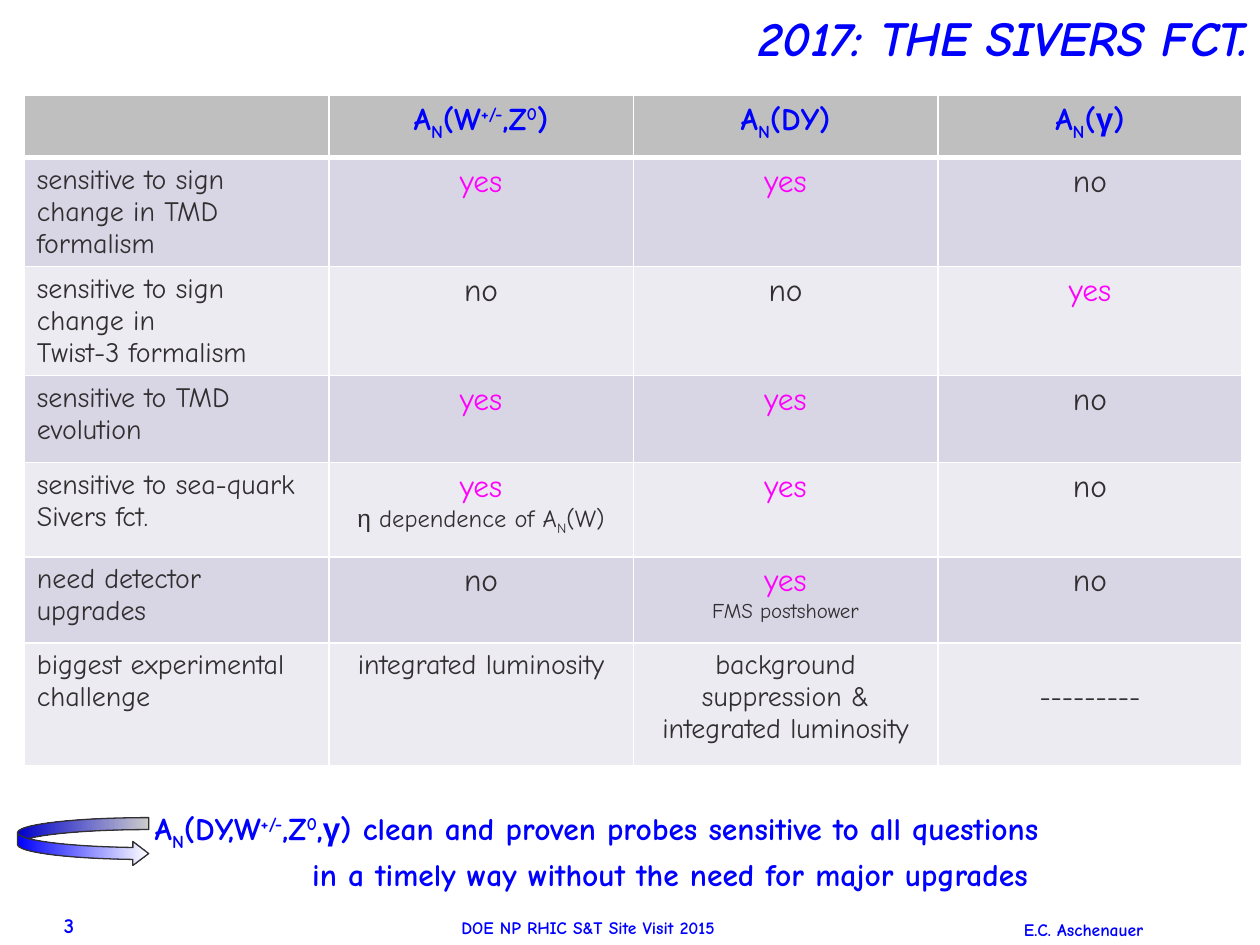
from lxml import etree
from pptx import Presentation
from pptx.dml.color import RGBColor
from pptx.enum import shapes, text
from pptx.oxml.ns import qn
from pptx.util import Pt

BLUE = RGBColor(0x00, 0x00, 0xFF)
PINK = RGBColor(0xFF, 0x00, 0xFF)
DARK = RGBColor(0x32, 0x2F, 0x31)
WHITE = RGBColor(0xFF, 0xFF, 0xFF)
GREY = RGBColor(0xBF, 0xBF, 0xBF)
BANDS = [RGBColor(0xD8, 0xD5, 0xE5), RGBColor(0xED, 0xEB, 0xF2)]
FONT, GREEK = "Comic Neue", "Arial"
SUB, SUP = -25000, 30000
LEFT, CENTER, RIGHT = text.PP_ALIGN.LEFT, text.PP_ALIGN.CENTER, text.PP_ALIGN.RIGHT
TOP, MIDDLE, BOTTOM = text.MSO_ANCHOR.TOP, text.MSO_ANCHOR.MIDDLE, text.MSO_ANCHOR.BOTTOM

A_N = [("A", {}), ("N", {"base": SUB})]
W_Z = [("W", {}), ("+/-", {"base": SUP}), (",Z", {}), ("0", {"base": SUP})]
GAMMA = [("γ", {"name": GREEK})]
HEADS = [
    A_N + [("(", {})] + W_Z + [(")", {})],
    A_N + [("(DY)", {})],
    A_N + [("(", {})] + GAMMA + [(")", {})],
]
YES = ([("yes", {})], {"size": 18, "color": PINK})
NO = ([("no", {})], {"size": 18})
ETA = ([("η", {"name": GREEK}), (" dependence of A", {}), ("N", {"base": SUB}), ("(W)", {})],
       {"size": 14})


def plain(words, **fmt):
    return [("" + words, {})], fmt


ROWS = [
    (["sensitive to sign change in TMD", "formalism"], [[YES], [YES], [NO]]),
    (["sensitive to sign change in", "Twist-3 formalism"], [[NO], [NO], [YES]]),
    (["sensitive to TMD", "evolution"], [[YES], [YES], [NO]]),
    (["sensitive to sea-quark Sivers fct."], [[YES, ETA], [YES], [NO]]),
    (["need detector upgrades"], [[NO], [YES, plain("FMS postshower", size=12)], [NO]]),
    (["biggest experimental challenge"],
     [[plain("integrated luminosity")],
      [plain("background suppression & integrated luminosity")],
      [plain("---------")]]),
]
ROW_HEIGHTS = [35.3, 49.7, 49.7, 49.7, 54, 49, 70.5]


def write(tf, paras, align=LEFT, **base):
    for i, (runs, fmt) in enumerate(paras):
        p = tf.paragraphs[0] if i == 0 else tf.add_paragraph()
        p.alignment = align
        for words, extra in runs:
            r = p.add_run()
            r.text = words
            f = {"name": FONT, "size": 16, "bold": False, "color": DARK, **base, **fmt, **extra}
            f["size"] = Pt(f["size"])
            r.font.color.rgb = f.pop("color")
            shift = f.pop("base", None)
            for key, value in f.items():
                setattr(r.font, key, value)
            if shift:
                r.font._element.set("baseline", str(shift))


def add_label(s, box, paras, align=LEFT, anchor=TOP, **fmt):
    tf = s.shapes.add_textbox(*map(Pt, box)).text_frame
    tf.word_wrap = True
    tf.vertical_anchor = anchor
    write(tf, paras, align, **{"bold": True, "color": BLUE, **fmt})
    return tf


def add_title(s, box):
    sp = s.shapes.title
    sp.left, sp.top, sp.width, sp.height = map(Pt, box)
    tf = sp.text_frame
    tf.vertical_anchor = MIDDLE
    write(tf, [plain("2017: THE SIVERS FCT.")], RIGHT, size=28, bold=True, italic=True, color=BLUE)
    tf.paragraphs[0].line_spacing = 0.8


def style_cell(cell, fill, bottom=1):
    tcPr = cell._tc.get_or_add_tcPr()
    for side, width in {"lnL": 1, "lnR": 1, "lnT": 1, "lnB": bottom}.items():
        ln = etree.SubElement(tcPr, qn("a:" + side), w=str(Pt(width)))
        solid = etree.SubElement(ln, qn("a:solidFill"))
        etree.SubElement(solid, qn("a:srgbClr"), val=str(WHITE))
    cell.fill.solid()
    cell.fill.fore_color.rgb = fill


def add_comparison(s, box):
    table = s.shapes.add_table(len(ROWS) + 1, len(HEADS) + 1, *map(Pt, box)).table
    for col in table.columns:
        col.width = Pt(box[2] / len(table.columns))
    for row, height in zip(table.rows, ROW_HEIGHTS):
        row.height = Pt(height)
    for c in range(len(HEADS) + 1):
        style_cell(table.cell(0, c), GREY, 3)
    for c, runs in enumerate(HEADS, 1):
        write(table.cell(0, c).text_frame, [(runs, {})], CENTER, size=18, bold=True, color=BLUE)
    for i, (question, answers) in enumerate(ROWS, 1):
        cells = table.rows[i].cells
        for cell in cells:
            style_cell(cell, BANDS[(i - 1) % 2])
        write(cells[0].text_frame, [plain(line) for line in question])
        for cell, paras in zip(list(cells)[1:], answers):
            write(cell.text_frame, paras, CENTER)
    table.cell(len(ROWS), len(HEADS)).margin_top = Pt(22)


def add_arrow(s, box):
    sp = s.shapes.add_shape(shapes.MSO_SHAPE.CURVED_RIGHT_ARROW, *map(Pt, box))
    sp.shadow.inherit = False
    for i, value in enumerate([0.25, 0.5, 0.33]):
        sp.adjustments[i] = value
    sp.fill.gradient()
    sp.fill.gradient_angle = 0
    for stop, position, color in zip(sp.fill.gradient_stops, (0, 1), (BLUE, WHITE)):
        stop.position = position
        stop.color.rgb = color
    sp.line.color.rgb = DARK
    sp.line.width = Pt(0.75)


def add_conclusion(s, box):
    x, y, w, h = box
    add_arrow(s, (x, y + 8.6, 75, 27.4))
    first = (A_N + [("(DY,", {})] + W_Z + [(",", {})] + GAMMA
             + [(") clean and proven probes sensitive to all questions", {})])
    second = plain("in a timely way without the need for major upgrades")
    tf = add_label(s, (x + 71.3, y, w - 71.3, h), [(first, {}), second], size=18)
    p = tf.paragraphs[1]
    p.space_before = Pt(2)
    p._p.get_or_add_pPr().set("marL", str(Pt(90)))


def add_footer(s, box):
    x, y, w, h = box
    add_label(s, (x + 1.4, y, 48.2, h), [plain("3")], RIGHT, BOTTOM, size=12)
    add_label(s, (x + 160, y, 352, h), [plain("DOE NP RHIC S&T Site Visit 2015")],
              CENTER, BOTTOM, size=10)
    add_label(s, (x + 578, y, 132, h + 1.5), [plain("E.C. Aschenauer")], LEFT, BOTTOM, size=10)


def main():
    prs = Presentation()
    prs.slide_width, prs.slide_height = Pt(720), Pt(540)
    s = prs.slides.add_slide(prs.slide_layouts[5])
    add_title(s, (60, 0, 660, 48))
    add_comparison(s, (13.9, 54.7, 696, 389))
    add_conclusion(s, (10, 458.6, 681, 51))
    add_footer(s, (0, 510.5, 720, 29))
    prs.save("out.pptx")


if __name__ == "__main__":
    main()
